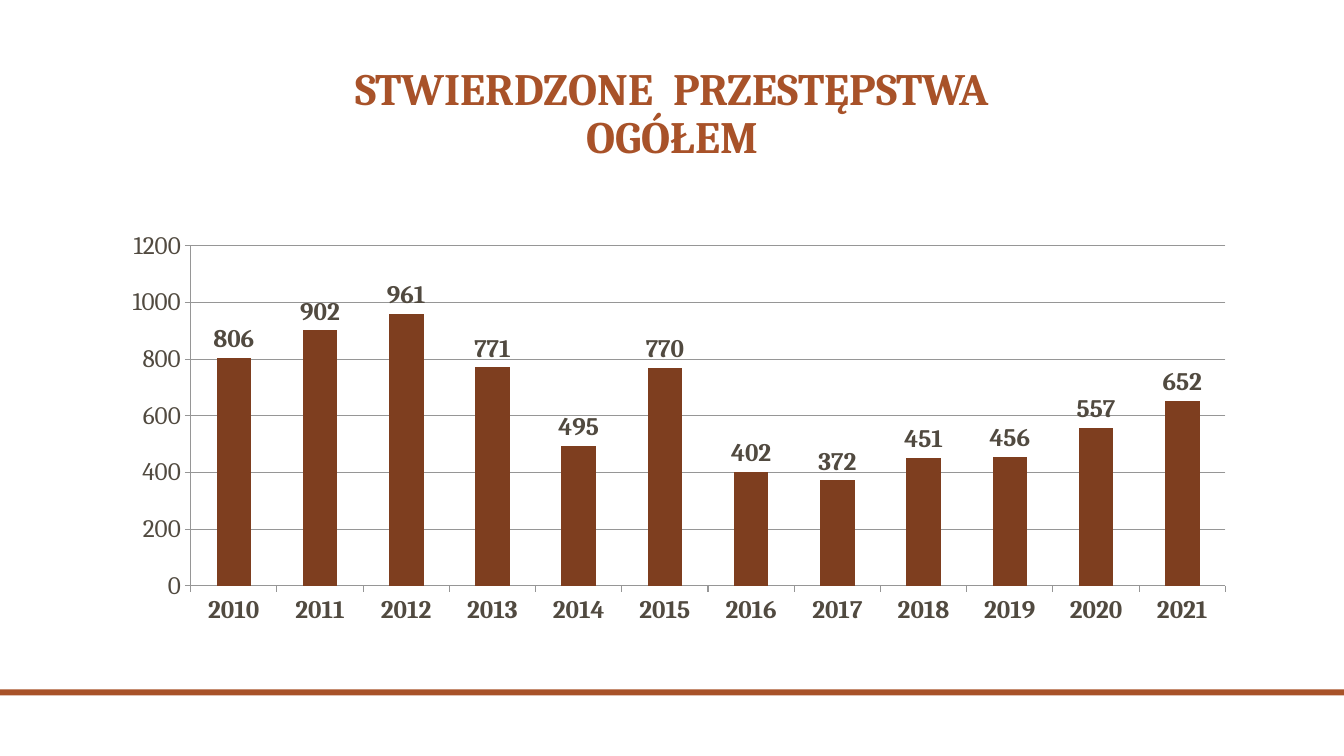
from lxml import etree
from pptx import Presentation
from pptx.chart.data import CategoryChartData
from pptx.dml.color import RGBColor
from pptx.enum.chart import XL_CHART_TYPE, XL_LABEL_POSITION, XL_TICK_MARK
from pptx.enum.shapes import MSO_SHAPE
from pptx.enum.text import MSO_ANCHOR, PP_ALIGN
from pptx.util import Inches, Pt

COLUMNS = XL_CHART_TYPE.COLUMN_CLUSTERED
OUTSIDE_END = XL_LABEL_POSITION.OUTSIDE_END
TICK_OUT, TICK_NONE = XL_TICK_MARK.OUTSIDE, XL_TICK_MARK.NONE
BOTTOM = MSO_ANCHOR.BOTTOM
CENTER = PP_ALIGN.CENTER
RECTANGLE = MSO_SHAPE.RECTANGLE

WIDTH, HEIGHT = 13.33, 7.5
FONT = "Cambria"
RUST, BROWN, INK, GRID = "A85229", "7E3E1F", "514A40", "969696"
FIRST_YEAR = 2010
CRIMES = [806, 902, 961, 771, 495, 770, 402, 372, 451, 456, 557, 652]
PLOT_SHARES = {"x": 0.071, "y": 0.054, "w": 0.909, "h": 0.829}


def color(hex_code):
    return RGBColor.from_string(hex_code)


def inches(box):
    return [Inches(length) for length in box]


def style_font(font, size, hex_code, bold):
    font.name, font.size, font.bold = FONT, Pt(size), bold
    font.color.rgb = color(hex_code)


def add_footer_band(slide, box):
    band = slide.shapes.add_shape(RECTANGLE, *inches(box))
    band.shadow.inherit = False
    band.fill.solid()
    band.fill.fore_color.rgb = color(RUST)
    band.line.fill.background()


def add_heading(slide, box, wording):
    frame = slide.shapes.add_textbox(*inches(box)).text_frame
    frame.word_wrap = True
    frame.vertical_anchor = BOTTOM
    heading = frame.paragraphs[0]
    heading.text = wording
    heading.alignment = CENTER
    heading.line_spacing = 0.9
    style_font(heading.font, 32, RUST, True)


def fix_plot_area(chart, shares):
    """Place the inner plot area at the given shares of the chart frame."""
    plot_area = chart.plots[0]._element.getparent()
    namespace = etree.QName(plot_area).namespace

    def add(parent, tag, value=None):
        child = etree.SubElement(parent, f"{{{namespace}}}{tag}")
        if value is not None:
            child.set("val", str(value))
        return child

    for old_layout in plot_area.findall(f"{{{namespace}}}layout"):
        plot_area.remove(old_layout)
    layout = add(plot_area, "layout")
    plot_area.insert(0, layout)
    manual = add(layout, "manualLayout")
    add(manual, "layoutTarget", "inner")
    for side in "xy":
        add(manual, f"{side}Mode", "edge")
    for side, share in shares.items():
        add(manual, side, share)


def style_axis(axis, bold):
    axis.major_tick_mark, axis.minor_tick_mark = TICK_OUT, TICK_NONE
    axis.format.line.color.rgb = color(GRID)
    axis.format.line.width = Pt(0.75)
    style_font(axis.tick_labels.font, 18, INK, bold)


def add_crime_chart(slide, box):
    data = CategoryChartData()
    data.categories = [str(FIRST_YEAR + i) for i in range(len(CRIMES))]
    data.add_series("Series 1", CRIMES)
    chart = slide.shapes.add_chart(COLUMNS, *inches(box), data).chart
    chart.has_legend = chart.has_title = False
    style_font(chart.font, 18, INK, False)
    fix_plot_area(chart, PLOT_SHARES)

    years, counts = chart.category_axis, chart.value_axis
    style_axis(years, True)
    style_axis(counts, False)
    counts.minimum_scale, counts.maximum_scale, counts.major_unit = 0, 1200, 200
    counts.has_major_gridlines = True
    counts.major_gridlines.format.line.color.rgb = color(GRID)
    counts.major_gridlines.format.line.width = Pt(0.75)

    bars = chart.plots[0]
    bars.gap_width = 150
    bars.vary_by_categories = False
    crimes = bars.series[0]
    crimes.format.fill.solid()
    crimes.format.fill.fore_color.rgb = color(BROWN)
    labels = crimes.data_labels
    labels.show_value = True
    labels.position = OUTSIDE_END
    style_font(labels.font, 18, INK, True)


def main():
    deck = Presentation()
    deck.slide_width, deck.slide_height = inches((WIDTH, HEIGHT))
    slide = deck.slides.add_slide(deck.slide_layouts[6])
    add_footer_band(slide, (0, 6.84, WIDTH, 0.06))
    add_heading(slide, (1.42, 0.42, 10.5, 1.25), "STWIERDZONE  PRZESTĘPSTWA\vOGÓŁEM")
    add_crime_chart(slide, (1.09, 2.22, 11.29, 4.07))
    deck.save("out.pptx")


if __name__ == "__main__":
    main()
